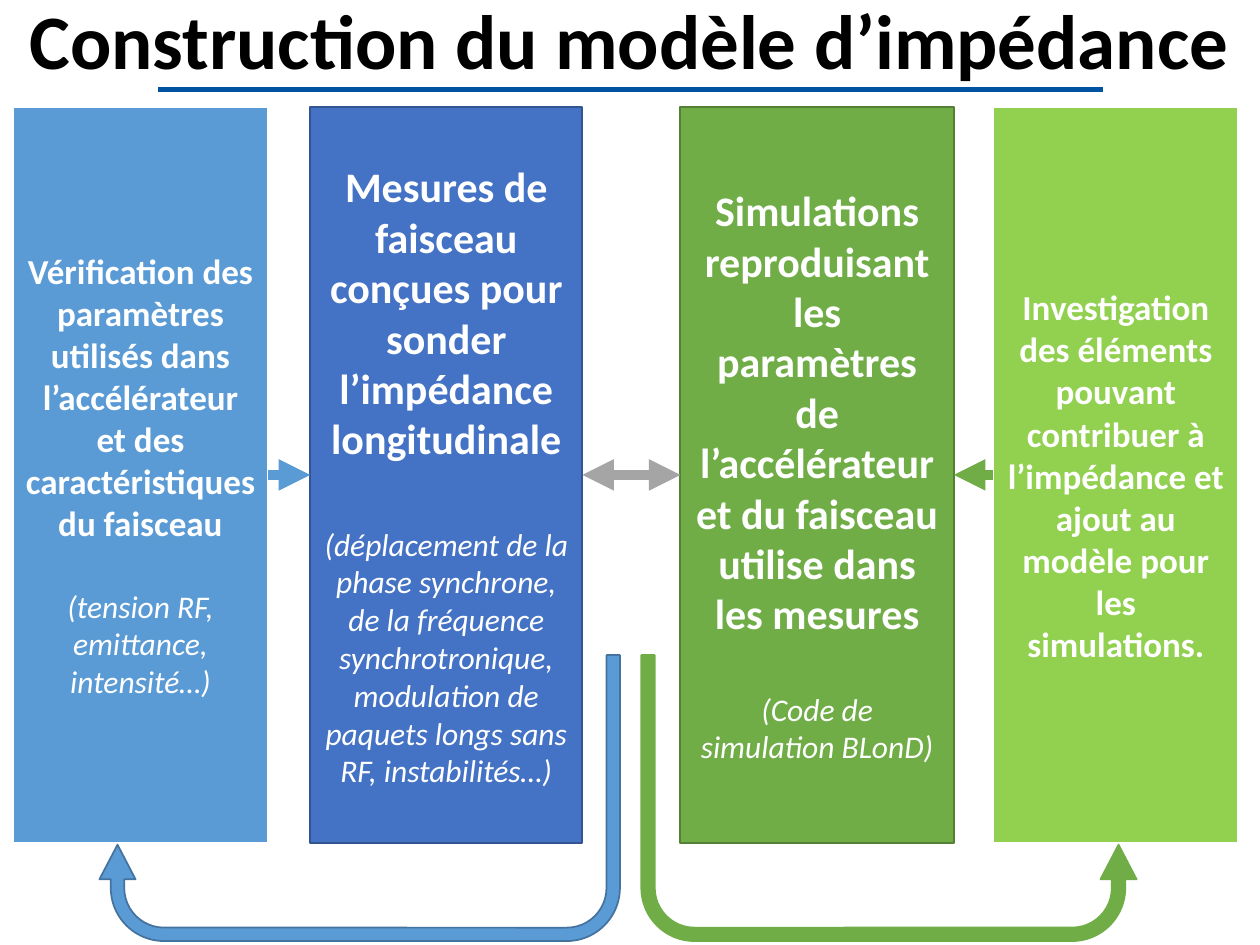
from lxml import etree
from pptx import Presentation
from pptx.dml.color import RGBColor
from pptx.enum import shapes, text
from pptx.oxml import ns
from pptx.util import Pt


def rgb(value):
    return RGBColor.from_string(value)


def add_line(x1, x2, y, color, width, ends=()):
    """Horizontal line; ends names the arrowheads (headEnd, tailEnd) to draw."""
    line = s.shapes.add_connector(shapes.MSO_CONNECTOR.STRAIGHT, Pt(x1), Pt(y), Pt(x2), Pt(y))
    line.line.color.rgb = rgb(color)
    line.line.width = Pt(width)
    ln = line.line._get_or_add_ln()
    etree.SubElement(ln, ns.qn("a:round"))
    for end in ends:
        etree.SubElement(ln, ns.qn("a:" + end), type="triangle")
    etree.SubElement(line._element.spPr, ns.qn("a:effectLst"))


prs = Presentation()
prs.slide_width, prs.slide_height = Pt(720), Pt(540)
s = prs.slides.add_slide(prs.slide_layouts[6])

# Title
title = s.shapes.add_textbox(0, 0, Pt(720), Pt(51))
tf = title.text_frame
tf.word_wrap = True
tf.vertical_anchor = text.MSO_ANCHOR.MIDDLE
p = tf.paragraphs[0]
p.text = "Construction du modèle d’impédance"
p.alignment = text.PP_ALIGN.CENTER
p.line_spacing = 0.9
p.font.name, p.font.size, p.font.bold = "Calibri", Pt(44), True
p.font.color.rgb = rgb("000000")
add_line(90, 630, 51.3, "0053A1", 3)

# Panels: left, width, fill, outline, outline width, heading size, heading, gap, detail
panels = [
    (7.2, 146.2, "5B9BD5", "FFFFFF", 1.5, 20,
     "Vérification des paramètres utilisés dans l’accélérateur et des "
     "caractéristiques du faisceau", 24.4, "(tension RF, emittance, intensité…)"),
    (177.3, 155.5, "4472C4", "325491", 1, 24,
     "Mesures de faisceau conçues pour sonder l’impédance longitudinale", 35,
     "(déplacement de la phase synchrone, de la fréquence synchrotronique, "
     "modulation de paquets longs sans RF, instabilités…)"),
    (388.8, 156.3, "70AD47", "538035", 1, 24,
     "Simulations reproduisant les paramètres de l’accélérateur et du faisceau "
     "utilise dans les mesures", 29.3, "(Code de simulation BLonD)"),
    (567.4, 140.4, "92D050", "FFFFFF", 1.5, 20,
     "Investigation des éléments pouvant contribuer à l’impédance et ajout au "
     "modèle pour les simulations.", 0, ""),
]
for left, width, fill, outline, weight, size, heading, gap, detail in panels:
    sp = s.shapes.add_shape(shapes.MSO_SHAPE.RECTANGLE, Pt(left), Pt(61.2), Pt(width), Pt(420.5))
    sp.shadow.inherit = False
    sp.fill.solid()
    sp.fill.fore_color.rgb = rgb(fill)
    sp.line.color.rgb = rgb(outline)
    sp.line.width = Pt(weight)
    tf = sp.text_frame
    tf.word_wrap = True
    tf.vertical_anchor = text.MSO_ANCHOR.MIDDLE
    p = tf.paragraphs[0]
    p.text = heading
    p.font.size, p.font.bold = Pt(size), True
    if detail:
        p = tf.add_paragraph()
        p.text = detail
        p.space_before = Pt(gap)
        p.font.size, p.font.italic = Pt(18), True
    for p in tf.paragraphs:
        p.alignment = text.PP_ALIGN.CENTER
        p.font.name = "Calibri"
        p.font.color.rgb = rgb("FFFFFF")

# Arrows between panels
add_line(153.4, 177.3, 271.4, "5B9BD5", 6, ["tailEnd"])
add_line(332.8, 388.8, 271.4, "A5A5A5", 6, ["headEnd", "tailEnd"])
add_line(545.1, 567.4, 271.4, "70AD47", 6, ["headEnd"])

# Feedback arrows to the outer panels: left, width, fill, outline, mirrored
for left, width, fill, outline, mirrored in [
    (56.9, 297.4, "5B9BD5", "43739E", True),
    (366.5, 283, "70AD47", "70AD47", False),
]:
    sp = s.shapes.add_shape(shapes.MSO_SHAPE.U_TURN_ARROW, Pt(left), Pt(374.4), Pt(width), Pt(163.4))
    for i, value in enumerate([0.047, 0.063, 0.121, 0.186, 0.337]):
        sp.adjustments[i] = value
    xfrm = sp._element.spPr.xfrm
    xfrm.set("flipV", "1")
    if mirrored:
        xfrm.set("flipH", "1")
    sp.shadow.inherit = False
    sp.fill.solid()
    sp.fill.fore_color.rgb = rgb(fill)
    sp.line.color.rgb = rgb(outline)
    sp.line.width = Pt(1)

prs.save("out.pptx")
